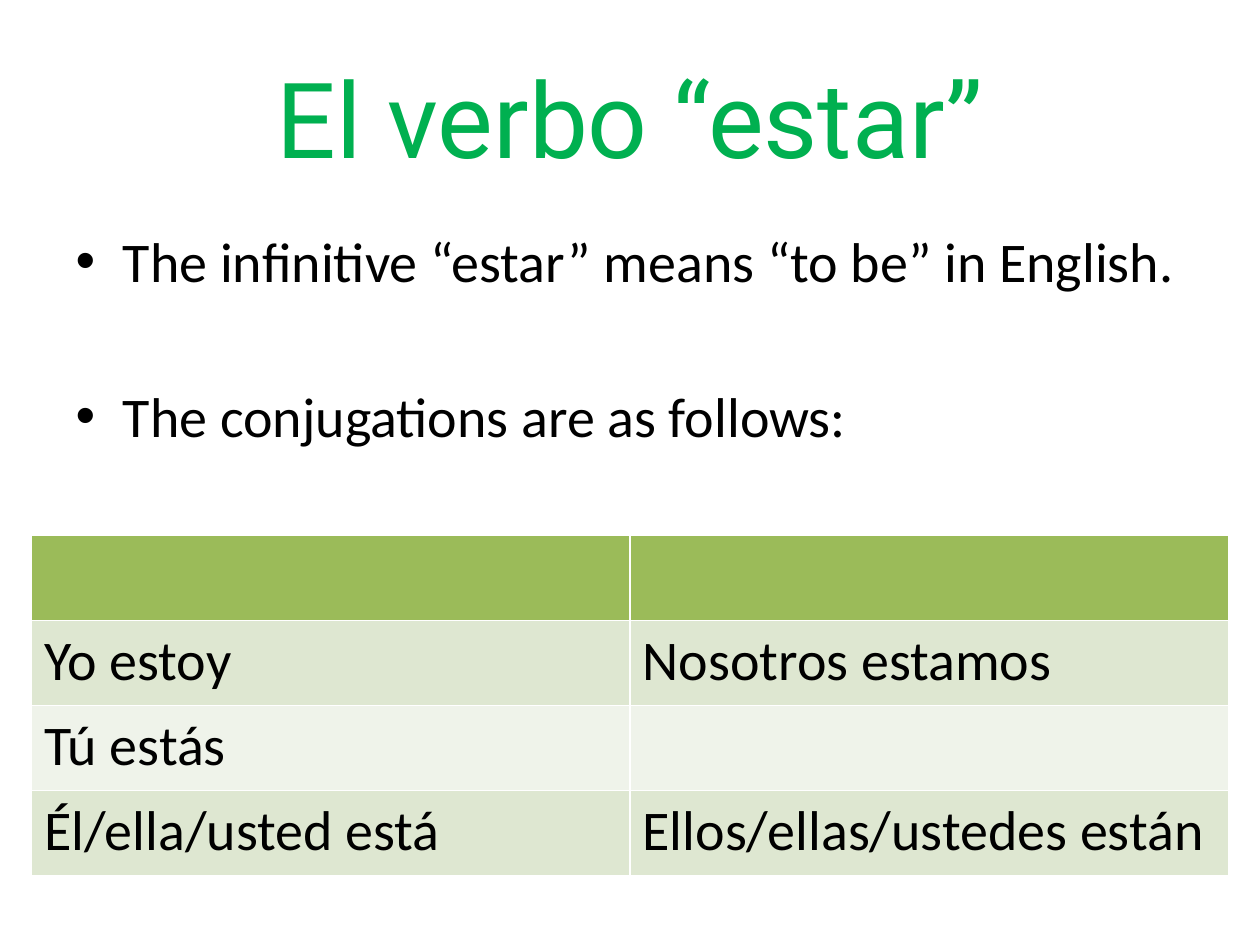
"""Builds a slide on the conjugation of the verb estar."""
from dataclasses import dataclass

from pptx import Presentation
from pptx import util as u
from pptx.dml.color import RGBColor
from pptx.enum import text


@dataclass(frozen=True)
class Theme:
    """Colours, fonts and type sizes of the lesson."""
    title_font: str = "Roboto"
    body_font: str = "Calibri"
    title_size: int = 60
    body_size: int = 32
    title_color: str = "00B050"
    ink: str = "000000"
    header_fill: str = "9BBB59"
    band_fills: tuple = ("DEE7D1", "EFF3EA")


class LessonPage:
    """Holds the theme and the current slide."""

    def __init__(self, deck, theme):
        """Add a title and content slide."""
        self.theme = theme
        self.page = deck.slides.add_slide(deck.slide_layouts[1])

    def place(self, box, left, top, width, height):
        """Move and size a placeholder in inches."""
        box.left, box.top = u.Inches(left), u.Inches(top)
        box.width, box.height = u.Inches(width), u.Inches(height)

    def style(self, para, font, size, color):
        """Set the font of a whole paragraph."""
        para.font.name = font
        para.font.size = u.Pt(size)
        para.font.color.rgb = RGBColor.from_string(color)

    def style_body(self, para):
        """Give a paragraph the body style."""
        self.style(para, self.theme.body_font, self.theme.body_size, self.theme.ink)

    def title(self, words, *area):
        """Fill the title placeholder."""
        box = self.page.shapes.title
        self.place(box, *area)
        box.text_frame.text = words
        para = box.text_frame.paragraphs[0]
        para.alignment = text.PP_ALIGN.CENTER
        self.style(para, self.theme.title_font, self.theme.title_size,
                   self.theme.title_color)

    def bullets(self, lines, gap, *area):
        """Fill the body placeholder with bullets set apart by a gap."""
        box = self.page.placeholders[1]
        self.place(box, *area)
        box.text_frame.text = "\n".join(lines)
        for para in box.text_frame.paragraphs:
            self.style_body(para)
        for para in box.text_frame.paragraphs[1:]:
            para.space_before = u.Pt(gap)

    def table(self, rows, left, top, width, height):
        """Add a banded table with a header row."""
        grid = self.page.shapes.add_table(
            len(rows), len(rows[0]), u.Inches(left), u.Inches(top),
            u.Inches(width), u.Inches(height)).table
        for r, row in enumerate(rows):
            fill = self.theme.band_fills[(r - 1) % 2] if r else self.theme.header_fill
            for c, words in enumerate(row):
                cell = grid.cell(r, c)
                cell.fill.solid()
                cell.fill.fore_color.rgb = RGBColor.from_string(fill)
                if words:
                    cell.text = words
                    self.style_body(cell.text_frame.paragraphs[0])


def main():
    """Build and save the deck."""
    deck = Presentation()
    deck.slide_width, deck.slide_height = u.Inches(10), u.Inches(7.5)
    lesson = LessonPage(deck, Theme())
    lesson.title("El verbo “estar”", 0.5, 0.3, 9, 1.25)
    lesson.bullets(["The infinitive “estar” means “to be” in English.",
                    "The conjugations are as follows:"], 50, 0.5, 1.75, 9, 4.95)
    lesson.table([("", ""),
                  ("Yo estoy", "Nosotros estamos"),
                  ("Tú estás", ""),
                  ("Él/ella/usted está", "Ellos/ellas/ustedes están")],
                 0.25, 4.25, 9.5, 2.7)
    deck.save("out.pptx")


if __name__ == "__main__":
    main()
